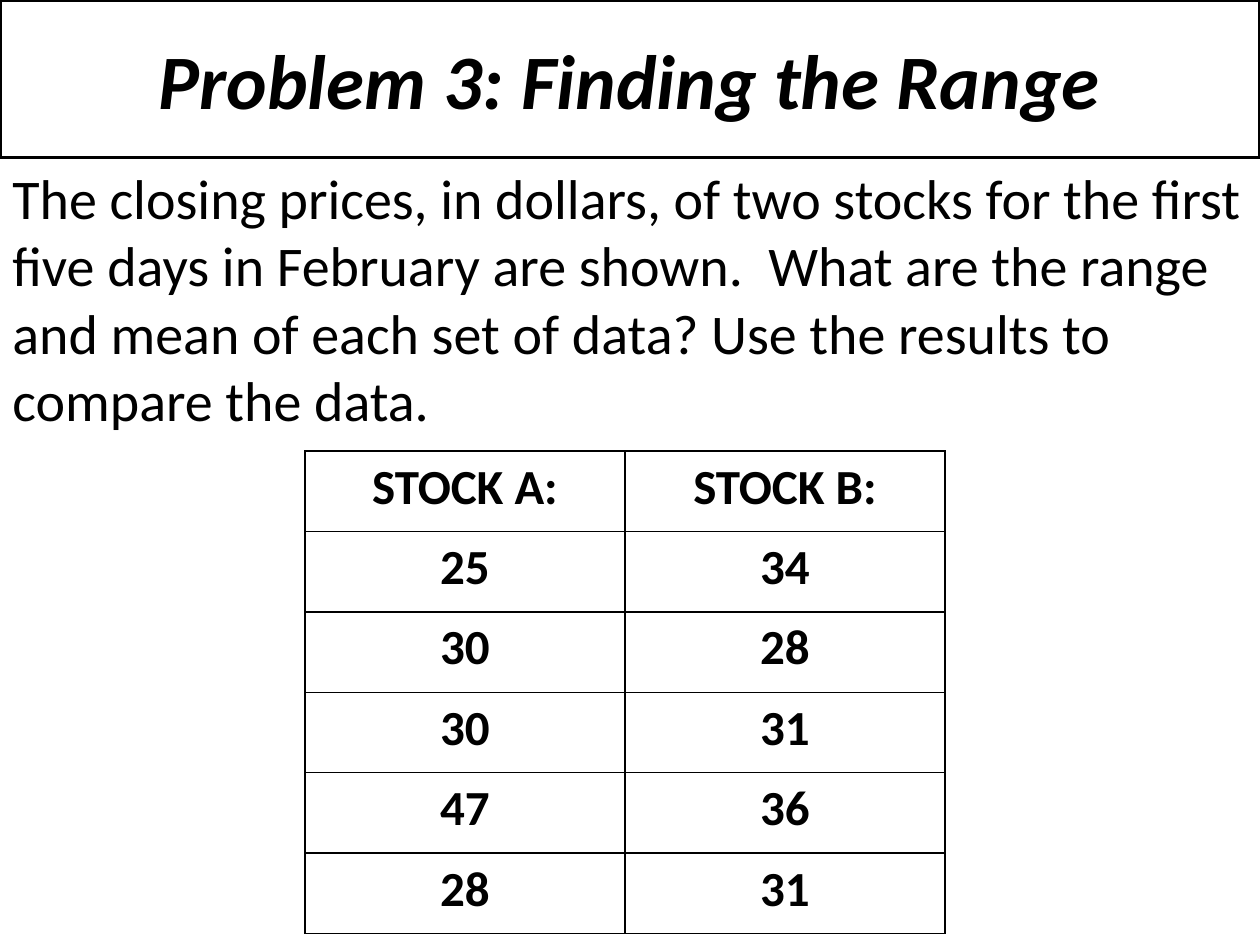
"""Build a slide that poses a range and mean problem about two stocks."""
from lxml import etree
from pptx import Presentation
from pptx.dml.color import RGBColor
from pptx.enum.shapes import MSO_SHAPE
from pptx.enum.text import MSO_ANCHOR, PP_ALIGN
from pptx.oxml.ns import qn
from pptx.util import Inches, Pt

RECTANGLE = MSO_SHAPE.RECTANGLE
TOP, MIDDLE = MSO_ANCHOR.TOP, MSO_ANCHOR.MIDDLE
LEFT, CENTER = PP_ALIGN.LEFT, PP_ALIGN.CENTER

COLORS = {"ink": "000000", "paper": "FFFFFF"}
FONT = "Calibri"

PROBLEM = (
    "The closing prices, in dollars, of two stocks for the first five days "
    "in February are shown.  What are the range and mean of each set of data? "
    "Use the results to compare the data."
)
STOCK_PRICES = [
    ("STOCK A:", "STOCK B:"),
    ("25", "34"),
    ("30", "28"),
    ("30", "31"),
    ("47", "36"),
    ("28", "31"),
]


class SlideBuilder:
    """Hold the style and the current slide, and add elements to it."""

    def __init__(self, slide, font, colors):
        self.slide = slide
        self.font = font
        self.colors = colors

    def color(self, name):
        return RGBColor.from_string(self.colors[name])

    def add_text(self, text_frame, text, size, align=LEFT, bold=False, italic=False):
        paragraph = text_frame.paragraphs[0]
        paragraph.alignment = align
        run = paragraph.add_run()
        run.text = text
        run.font.name = self.font
        run.font.size = Pt(size)
        run.font.bold = bold
        run.font.italic = italic
        run.font.color.rgb = self.color("ink")

    def title_box(self, text, left, top, width, height):
        shape = self.slide.shapes.add_shape(
            RECTANGLE, Inches(left), Inches(top), Inches(width), Inches(height)
        )
        shape.shadow.inherit = False
        shape.fill.solid()
        shape.fill.fore_color.rgb = self.color("paper")
        shape.line.color.rgb = self.color("ink")
        shape.line.width = Pt(2)
        shape.text_frame.word_wrap = True
        shape.text_frame.vertical_anchor = MIDDLE
        self.add_text(shape.text_frame, text, 44, CENTER, bold=True, italic=True)

    def body_text(self, text, left, top, width, height):
        shape = self.slide.shapes.add_textbox(
            Inches(left), Inches(top), Inches(width), Inches(height)
        )
        shape.text_frame.word_wrap = True
        shape.text_frame.vertical_anchor = TOP
        self.add_text(shape.text_frame, text, 32)

    def table(self, rows, left, top, width, height):
        table = self.slide.shapes.add_table(
            len(rows), len(rows[0]),
            Inches(left), Inches(top), Inches(width), Inches(height),
        ).table
        table.first_row = False
        table.horz_banding = False
        for row_index, row in enumerate(rows):
            for column_index, text in enumerate(row):
                cell = table.cell(row_index, column_index)
                self.add_text(cell.text_frame, text, 28, CENTER, bold=True)
                self.cell_borders(cell)
                cell.fill.background()

    def cell_borders(self, cell):
        properties = cell._tc.get_or_add_tcPr()
        for side in ("a:lnL", "a:lnR", "a:lnT", "a:lnB"):
            line = etree.SubElement(properties, qn(side), w=str(Pt(1)))
            fill = etree.SubElement(line, qn("a:solidFill"))
            etree.SubElement(fill, qn("a:srgbClr"), val=self.colors["ink"])


def main():
    presentation = Presentation()
    presentation.slide_width = Inches(10)
    presentation.slide_height = Inches(7.5)
    slide = presentation.slides.add_slide(presentation.slide_layouts[6])
    builder = SlideBuilder(slide, FONT, COLORS)
    builder.title_box("Problem 3: Finding the Range", 0, 0, 10, 1.25)
    builder.body_text(PROBLEM, 0, 1.25, 10, 5.45)
    builder.table(STOCK_PRICES, 2.42, 3.58, 5.08, 3.83)
    presentation.save("out.pptx")


if __name__ == "__main__":
    main()
